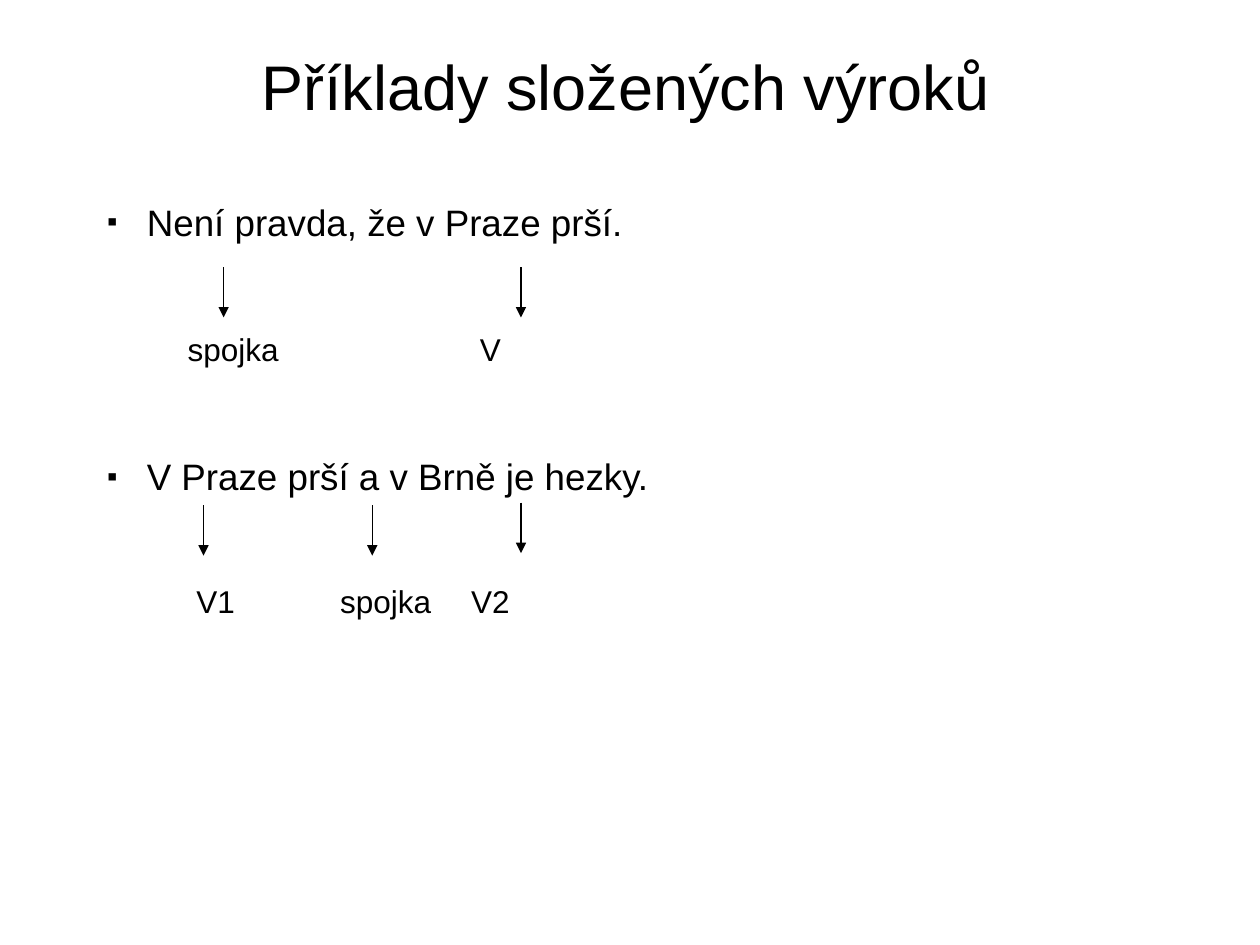
import dataclasses

import lxml.etree
import pptx
import pptx.dml.color
import pptx.enum.shapes
import pptx.enum.text
import pptx.oxml.ns
import pptx.util


@dataclasses.dataclass(frozen=True)
class Theme:
    font: str = "Arial"
    ink: pptx.dml.color.RGBColor = pptx.dml.color.RGBColor(0, 0, 0)
    title_size: float = 36
    sentence_size: float = 21
    label_size: float = 18
    line_width: float = 0.75


@dataclasses.dataclass(frozen=True)
class Box:
    left: float
    top: float
    width: float
    height: float


THEME = Theme()
COLUMNS, ROWS = 100, 75
CELL = pptx.util.Inches(0.1)
TITLE_BOX = Box(7.5, 1.3, 84.3, 11.7)
BODY_BOX = Box(7.5, 15.3, 84.3, 49.5)
BULLET_INDENT = 3.15
ARROW_LENGTH = 4
LABEL_WIDTH, LABEL_HEIGHT = 9, 3

EXAMPLES = [
    {
        "sentence": "Není pravda, že v Praze prší.",
        "space_before": 0,
        "label_top": 10.9,
        "labels": [("spojka", 7.4), ("V", 30.6)],
        "arrows": [(10.25, 5.9), (33.85, 5.9)],
    },
    {
        "sentence": "V Praze prší a v Brně je hezky.",
        "space_before": 114,
        "label_top": 30.9,
        "labels": [("V1", 8.1), ("spojka", 19.5), ("V2", 29.9)],
        "arrows": [(8.65, 24.8), (22.05, 24.8), (33.85, 24.6)],
    },
]


def cells(count):
    return pptx.util.Emu(round(count * CELL))


def add_child(parent, tag, **attributes):
    child = lxml.etree.SubElement(parent, pptx.oxml.ns.qn(tag))
    for name, value in attributes.items():
        child.set(name, str(value))


def place(shape, box):
    shape.left, shape.top = cells(box.left), cells(box.top)
    shape.width, shape.height = cells(box.width), cells(box.height)
    shape.text_frame.word_wrap = True
    shape.text_frame.auto_size = pptx.enum.text.MSO_AUTO_SIZE.NONE


def add_run(para, text, size):
    span = para.add_run()
    span.text = text
    span.font.name = THEME.font
    span.font.size = pptx.util.Pt(size)
    span.font.color.rgb = THEME.ink


def write_sentence(para, text, before):
    para.space_before = pptx.util.Pt(before)
    para.space_after = pptx.util.Pt(6)
    para.line_spacing = 1.0
    properties = para._p.get_or_add_pPr()
    properties.set("marL", str(cells(BULLET_INDENT)))
    properties.set("indent", str(cells(-BULLET_INDENT)))
    add_child(properties, "a:buSzPct", val=80000)
    add_child(properties, "a:buFont", typeface=THEME.font)
    add_child(properties, "a:buChar", char="▪")
    add_run(para, text, THEME.sentence_size)


def add_label(page, text, box):
    label = page.shapes.add_textbox(0, 0, 0, 0)
    place(label, box)
    frame = label.text_frame
    frame.margin_left = frame.margin_right = 0
    frame.margin_top = frame.margin_bottom = 0
    add_run(frame.paragraphs[0], text, THEME.label_size)


def add_arrow(page, left, top):
    arrow = page.shapes.add_connector(
        pptx.enum.shapes.MSO_CONNECTOR.STRAIGHT,
        cells(left), cells(top), cells(left), cells(top + ARROW_LENGTH),
    )
    arrow.line.color.rgb = THEME.ink
    arrow.line.width = pptx.util.Pt(THEME.line_width)
    add_child(arrow.line._get_or_add_ln(), "a:tailEnd", type="triangle")
    add_child(arrow._element.spPr, "a:effectLst")


def build_title(page, box):
    title = page.shapes.title
    place(title, box)
    title.text_frame.vertical_anchor = pptx.enum.text.MSO_ANCHOR.MIDDLE
    para = title.text_frame.paragraphs[0]
    para.alignment = pptx.enum.text.PP_ALIGN.CENTER
    para.line_spacing = 0.9
    add_run(para, "Příklady složených výroků", THEME.title_size)


def build_examples(page, box):
    body = page.placeholders[1]
    place(body, box)
    frame = body.text_frame
    frame.margin_top = cells(0.55)
    for number, example in enumerate(EXAMPLES):
        para = frame.add_paragraph() if number else frame.paragraphs[0]
        write_sentence(para, example["sentence"], example["space_before"])
        label_top = box.top + example["label_top"]
        for text, left in example["labels"]:
            label_box = Box(box.left + left, label_top, LABEL_WIDTH, LABEL_HEIGHT)
            add_label(page, text, label_box)
        for left, top in example["arrows"]:
            add_arrow(page, box.left + left, box.top + top)


def main():
    deck = pptx.Presentation()
    deck.slide_width, deck.slide_height = cells(COLUMNS), cells(ROWS)
    page = deck.slides.add_slide(deck.slide_layouts[1])
    build_title(page, TITLE_BOX)
    build_examples(page, BODY_BOX)
    deck.save("out.pptx")


if __name__ == "__main__":
    main()
